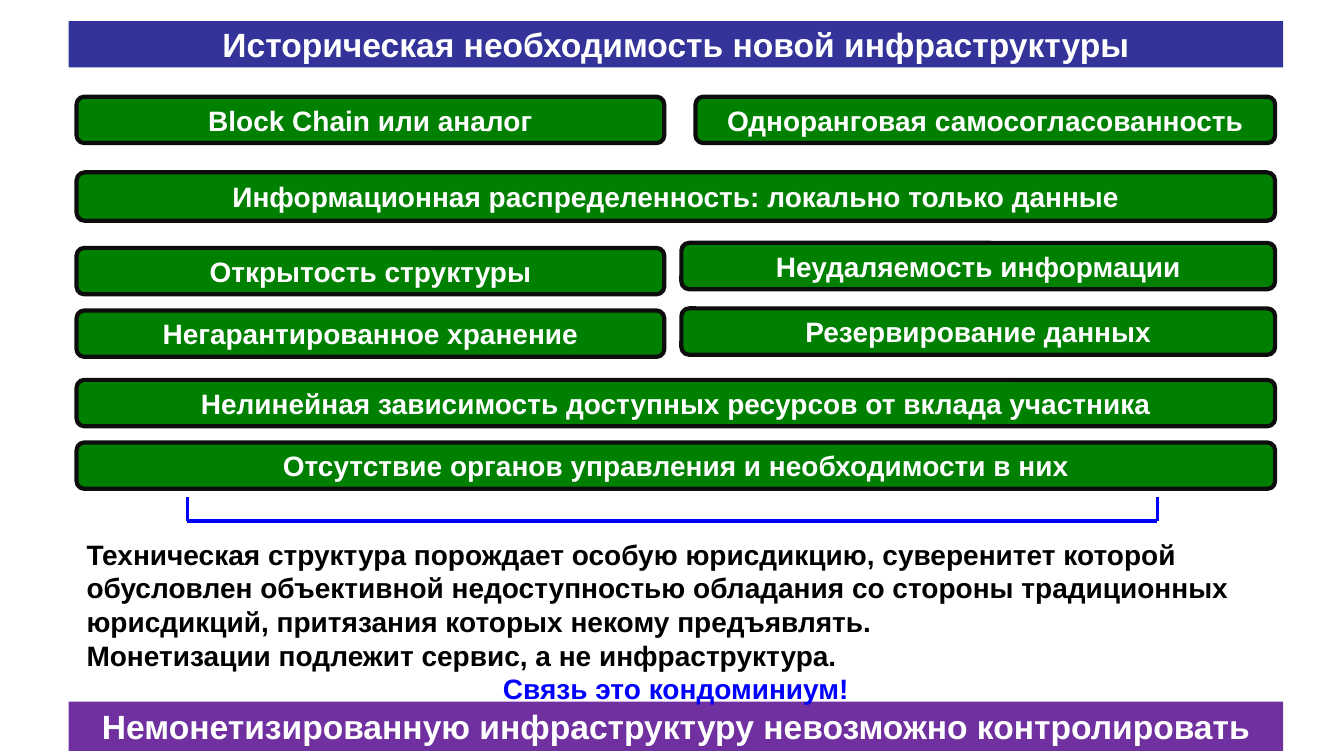
"""Build the slide on the historical need for a new infrastructure."""
from lxml import etree
from pptx import Presentation
from pptx.dml.color import RGBColor
from pptx.enum import shapes, text
from pptx.oxml import ns
from pptx.util import Pt

WHITE = RGBColor(0xFF, 0xFF, 0xFF)
BLACK = RGBColor(0x00, 0x00, 0x00)
NAVY = RGBColor(0x33, 0x33, 0x99)
PURPLE = RGBColor(0x70, 0x30, 0xA0)
GREEN = RGBColor(0x00, 0x80, 0x00)
OUTLINE = RGBColor(0x0D, 0x0D, 0x0D)
BLUE = RGBColor(0x00, 0x00, 0xFF)

LEFT, RIGHT = 54.7, 910.8
LEFT_COLUMN_END = 474.5
RIGHT_COLUMN = 486.7
BOX_HEIGHT = 33.1


def style_paragraph(paragraph, size, color, alignment):
    paragraph.alignment = alignment
    for run in paragraph.runs:
        run.font.name = "Arial"
        run.font.size = Pt(size)
        run.font.bold = True
        run.font.color.rgb = color


def add_label(kind, left, top, width, height, fill, size, wording):
    shape = slide.shapes.add_shape(kind, Pt(left), Pt(top), Pt(width), Pt(height))
    shape.shadow.inherit = False
    shape.fill.solid()
    shape.fill.fore_color.rgb = fill
    shape.line.fill.background()
    frame = shape.text_frame
    frame.text = wording
    frame.word_wrap = True
    frame.vertical_anchor = text.MSO_ANCHOR.MIDDLE
    style_paragraph(frame.paragraphs[0], size, WHITE, text.PP_ALIGN.CENTER)
    return shape


presentation = Presentation()
presentation.slide_width = Pt(960)
presentation.slide_height = Pt(540)
slide = presentation.slides.add_slide(presentation.slide_layouts[6])

bars = [
    (15.1, 33.1, NAVY, "Историческая необходимость новой инфраструктуры"),
    (501.1, 35.3, PURPLE, "Немонетизированную инфраструктуру невозможно контролировать"),
]
for top, height, fill, wording in bars:
    add_label(shapes.MSO_SHAPE.RECTANGLE, 49, top, 867.6, height, fill, 24, wording)

principles = [
    (LEFT, LEFT_COLUMN_END, 69.1, BOX_HEIGHT, "Block Chain или аналог"),
    (496.8, RIGHT, 69.1, BOX_HEIGHT, "Одноранговая самосогласованность"),
    (LEFT, RIGHT, 123.1, 34.6, "Информационная распределенность: локально только данные"),
    (LEFT, LEFT_COLUMN_END, 177.1, BOX_HEIGHT, "Открытость структуры"),
    (RIGHT_COLUMN, RIGHT, 173.5, BOX_HEIGHT, "Неудаляемость информации"),
    (LEFT, LEFT_COLUMN_END, 221.8, BOX_HEIGHT, "Негарантированное хранение"),
    (RIGHT_COLUMN, RIGHT, 220.3, BOX_HEIGHT, "Резервирование данных"),
    (LEFT, RIGHT, 271.4, BOX_HEIGHT, "Нелинейная зависимость доступных ресурсов от вклада участника"),
    (LEFT, RIGHT, 316.1, BOX_HEIGHT, "Отсутствие органов управления и необходимости в них"),
]
for left, right, top, height, wording in principles:
    box = add_label(shapes.MSO_SHAPE.FLOWCHART_ALTERNATE_PROCESS,
                    left, top, right - left, height, GREEN, 20, wording)
    box.line.color.rgb = OUTLINE
    box.line.width = Pt(3)

bracket_left, bracket_right, bracket_top, bracket_bottom = 133.9, 826.6, 355, 372.2
for start_x, end_x, end_y in [
    (bracket_left, bracket_right, bracket_bottom),
    (bracket_right, bracket_right, bracket_top),
    (bracket_left, bracket_left, bracket_top),
]:
    connector = slide.shapes.add_connector(
        shapes.MSO_CONNECTOR.STRAIGHT,
        Pt(start_x), Pt(bracket_bottom), Pt(end_x), Pt(end_y))
    connector.line.color.rgb = BLUE
    connector.line.width = Pt(2.25)
    etree.SubElement(connector.element.spPr, ns.qn("a:effectLst"))

conclusion = slide.shapes.add_textbox(Pt(LEFT), Pt(380.2), Pt(RIGHT - LEFT), Pt(128.2))
frame = conclusion.text_frame
frame.word_wrap = True
frame.auto_size = text.MSO_AUTO_SIZE.SHAPE_TO_FIT_TEXT
statements = [
    ("Техническая структура порождает особую юрисдикцию, суверенитет которой "
     "обусловлен объективной недоступностью обладания со стороны традиционных "
     "юрисдикций, притязания которых некому предъявлять.", BLACK, text.PP_ALIGN.LEFT),
    ("Монетизации подлежит сервис, а не инфраструктура.", BLACK, text.PP_ALIGN.LEFT),
    ("Связь это кондоминиум!", BLUE, text.PP_ALIGN.CENTER),
]
frame.text = "\n".join(wording for wording, color, alignment in statements)
for paragraph, (wording, color, alignment) in zip(frame.paragraphs, statements):
    style_paragraph(paragraph, 20, color, alignment)

presentation.save("out.pptx")
